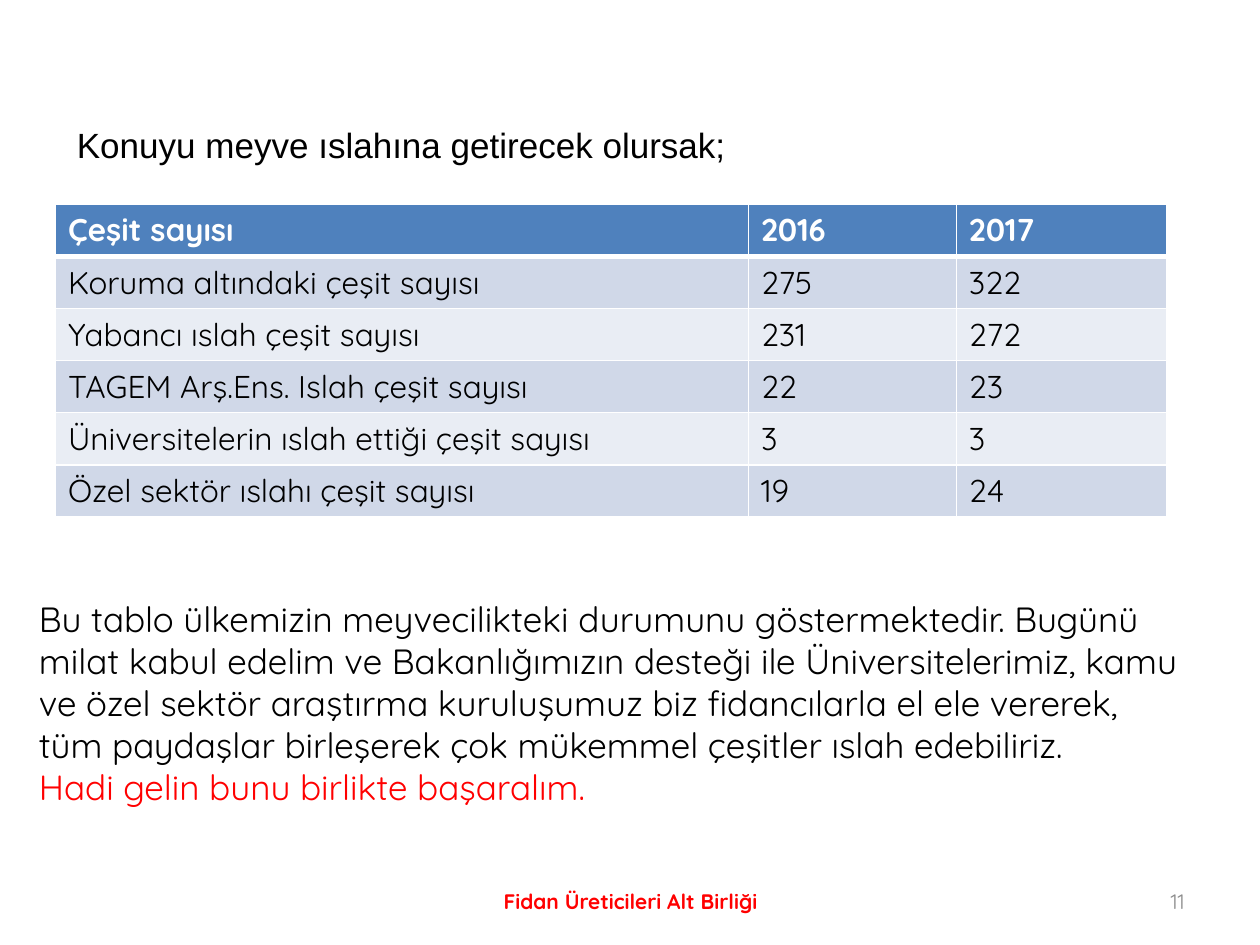
from lxml import etree
from pptx import Presentation
from pptx.dml.color import RGBColor
from pptx.enum.text import MSO_ANCHOR, MSO_AUTO_SIZE, PP_ALIGN
from pptx.oxml.ns import qn
from pptx.util import Inches, Pt

CENTER, RIGHT, JUSTIFY = PP_ALIGN.CENTER, PP_ALIGN.RIGHT, PP_ALIGN.JUSTIFY
MIDDLE = MSO_ANCHOR.MIDDLE
NO_FIT = MSO_AUTO_SIZE.NONE

BLACK = RGBColor(0x00, 0x00, 0x00)
WHITE = RGBColor(0xFF, 0xFF, 0xFF)
RED = RGBColor(0xFF, 0x00, 0x00)
GREY = RGBColor(0x8C, 0x8C, 0x8C)
HEADER_BLUE = RGBColor(0x4F, 0x81, 0xBD)
BAND_DARK = RGBColor(0xD0, 0xD8, 0xE8)
BAND_LIGHT = RGBColor(0xE9, 0xED, 0xF4)

TITLE_AND_CONTENT = 1
COLUMN_WIDTHS = (5.5, 1.65, 1.67)
VARIETY_COUNTS = (
    ("Çeşit sayısı", "2016", "2017"),
    ("Koruma altındaki çeşit sayısı", "275", "322"),
    ("Yabancı ıslah çeşit sayısı", "231", "272"),
    ("TAGEM Arş.Ens. Islah çeşit sayısı", "22", "23"),
    ("Üniversitelerin ıslah ettiği çeşit sayısı", "3", "3"),
    ("Özel sektör ıslahı çeşit sayısı", "19", "24"),
)
CALL_TO_ACTION = (
    ("Bu tablo ülkemizin meyvecilikteki durumunu göstermektedir. Bugünü milat "
     "kabul edelim ve Bakanlığımızın desteği ile Üniversitelerimiz, kamu ve özel "
     "sektör araştırma kuruluşumuz biz fidancılarla el ele vererek, tüm paydaşlar "
     "birleşerek çok mükemmel çeşitler ıslah edebiliriz.", BLACK),
    ("Hadi gelin bunu birlikte başaralım.", RED),
)


def format_font(font, color, **values):
    for name, value in {"name": "Quicksand", **values}.items():
        setattr(font, name, value)
    font.color.rgb = color


def place(shape, box):
    for name, value in zip(("left", "top", "width", "height"), box):
        setattr(shape, name, Inches(value))


def add_intro(page, box):
    body = page.placeholders[1]
    place(body, box)
    frame = body.text_frame
    frame.auto_size = NO_FIT
    para = frame.paragraphs[0]
    para.text = "Konuyu meyve ıslahına getirecek olursak;"
    properties = para._p.get_or_add_pPr()
    properties.set("marL", str(Inches(0.38)))
    properties.set("indent", str(Inches(-0.38)))
    etree.SubElement(properties, qn("a:buNone"))
    for name, value in {"alignment": JUSTIFY, "line_spacing": 2.0,
                        "space_before": Pt(0)}.items():
        setattr(para, name, value)
    format_font(para.runs[0].font, BLACK, name="Arial", size=Pt(20))


def add_borders(cell, **widths):
    """Draw white cell edges; widths are points keyed by L, R, T and B."""
    properties = cell._tc.get_or_add_tcPr()
    for side, width in widths.items():
        line = etree.SubElement(properties, qn(f"a:ln{side}"), w=str(Pt(width)))
        fill = etree.SubElement(line, qn("a:solidFill"))
        etree.SubElement(fill, qn("a:srgbClr"), val=str(WHITE))


def add_variety_table(page, box):
    table = page.shapes.add_table(
        len(VARIETY_COUNTS), len(COLUMN_WIDTHS), *map(Inches, box)).table
    for column, width in zip(table.columns, COLUMN_WIDTHS):
        column.width = Inches(width)
    for row_index, values in enumerate(VARIETY_COUNTS):
        is_header = row_index == 0
        if is_header:
            color = HEADER_BLUE
        else:
            color = BAND_DARK if row_index % 2 else BAND_LIGHT
        for column_index, value in enumerate(values):
            cell = table.cell(row_index, column_index)
            add_borders(cell, L=1, R=1, T=3 if row_index == 1 else 1,
                        B=3 if is_header else 1)
            cell.fill.solid()
            cell.fill.fore_color.rgb = color
            cell.text = value
            format_font(cell.text_frame.paragraphs[0].runs[0].font,
                        WHITE if is_header else BLACK,
                        size=Pt(18), bold=is_header)


def add_text(page, box, lines, size, bold=False, alignment=None, anchor=None):
    """Add a text box with one paragraph per (text, color) line."""
    frame = page.shapes.add_textbox(*map(Inches, box)).text_frame
    frame.word_wrap = True
    frame.vertical_anchor = anchor
    for index, (text, color) in enumerate(lines):
        para = frame.add_paragraph() if index else frame.paragraphs[0]
        para.alignment = alignment
        span = para.add_run()
        span.text = text
        format_font(span.font, color, size=Pt(size), bold=bold)


def add_footer(page, top, height):
    add_text(page, (3.42, top, 3.17, height),
             [("Fidan Üreticileri Alt Birliği", RED)], 12, True, CENTER, MIDDLE)
    add_text(page, (7.17, top, 2.33, height),
             [("11", GREY)], 12, False, RIGHT, MIDDLE)


def main():
    deck = Presentation()
    deck.slide_width, deck.slide_height = Inches(10), Inches(7.5)
    page = deck.slides.add_slide(deck.slide_layouts[TITLE_AND_CONTENT])
    empty_title = page.shapes.title.element
    empty_title.getparent().remove(empty_title)
    add_intro(page, (0.51, 0.6, 9, 6.49))
    add_variety_table(page, (0.44, 1.62, 8.82, 2.46))
    add_text(page, (0.21, 4.69, 9.29, 2.12), CALL_TO_ACTION, 20)
    add_footer(page, 6.95, 0.4)
    deck.save("out.pptx")


if __name__ == "__main__":
    main()
